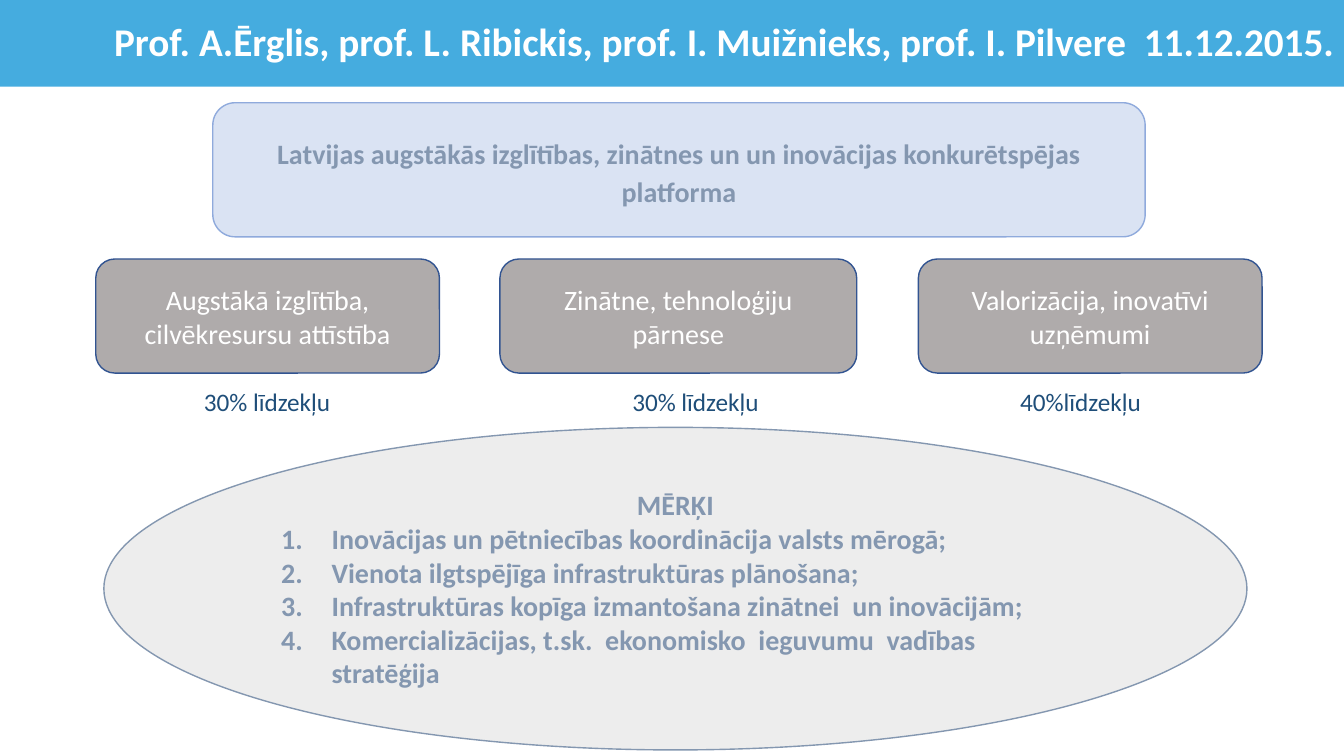
from lxml.etree import SubElement
from pptx import Presentation
from pptx.dml.color import RGBColor
from pptx.enum.shapes import MSO_SHAPE
from pptx.enum.text import MSO_ANCHOR, PP_ALIGN
from pptx.oxml.ns import qn
from pptx.util import Pt

COLORS = {
    "banner": "45ACDF",
    "platform": "DAE3F3",
    "platform_line": "8FAADC",
    "pillar": "AFABAB",
    "pillar_line": "325491",
    "goals": "EDEDED",
    "slate": "8497B0",
    "share": "1F4E79",
    "white": "FFFFFF",
}

PILLARS = [
    ("Augstākā izglītība, cilvēkresursu attīstība", 68.4, 245.5),
    ("Zinātne, tehnoloģiju pārnese", 357.1, 254.9),
    ("Valorizācija, inovatīvi uzņēmumi", 656, 245.5),
]

SHARES = [
    ("30% līdzekļu", 112.3, 157),
    ("30% līdzekļu", 427.7, 138.2),
    ("40%līdzekļu", 698.4, 146.9),
]

GOALS = [
    "Inovācijas un pētniecības koordinācija valsts mērogā;",
    "Vienota ilgtspējīga infrastruktūras plānošana;",
    "Infrastruktūras kopīga izmantošana zinātnei  un inovācijām;",
    "Komercializācijas, t.sk.  ekonomisko  ieguvumu  vadības stratēģija",
]


def color(name):
    return RGBColor.from_string(COLORS[name])


def format_paragraph(paragraph, text, size, font_color, bold=False,
                     alignment=PP_ALIGN.CENTER, spacing=1.0):
    paragraph.alignment = alignment
    paragraph.line_spacing = spacing
    run = paragraph.add_run()
    run.text = text
    font_format = {"name": "Calibri", "size": Pt(size), "bold": bold}
    for attribute, value in font_format.items():
        setattr(run.font, attribute, value)
    run.font.color.rgb = color(font_color)


def prepare_frame(shape):
    frame = shape.text_frame
    frame_format = {"word_wrap": True, "vertical_anchor": MSO_ANCHOR.MIDDLE}
    for attribute, value in frame_format.items():
        setattr(frame, attribute, value)
    return frame


def add_panel(slide, kind, bounds, fill, line=None):
    shape = slide.shapes.add_shape(kind, *map(Pt, bounds))
    shape.shadow.inherit = False
    shape.fill.solid()
    shape.fill.fore_color.rgb = color(fill)
    if line:
        shape.line.color.rgb = color(line)
        shape.line.width = Pt(1)
    else:
        shape.line.fill.background()
    return prepare_frame(shape)


def add_label(slide, bounds, text):
    frame = prepare_frame(slide.shapes.add_textbox(*map(Pt, bounds)))
    format_paragraph(frame.paragraphs[0], text, 18, "share")


def number_paragraph(paragraph):
    properties = paragraph._p.get_or_add_pPr()
    properties.set("marL", str(Pt(36)))
    properties.set("indent", str(Pt(-36)))
    SubElement(properties, qn("a:buFont"), typeface="+mj-lt")
    SubElement(properties, qn("a:buAutoNum"), type="arabicPeriod")


def add_goals(slide):
    frame = add_panel(slide, MSO_SHAPE.OVAL, (74.2, 305.3, 816.5, 230.4),
                      "goals", "slate")
    format_paragraph(frame.paragraphs[0], "MĒRĶI", 20, "slate", bold=True)
    for goal in GOALS:
        paragraph = frame.add_paragraph()
        format_paragraph(paragraph, goal, 20, "slate", bold=True,
                         alignment=PP_ALIGN.LEFT)
        number_paragraph(paragraph)


def main():
    presentation = Presentation()
    presentation.slide_width = Pt(960)
    presentation.slide_height = Pt(540)
    slide = presentation.slides.add_slide(presentation.slide_layouts[6])

    banner = add_panel(slide, MSO_SHAPE.RECTANGLE, (0, 0, 960, 61.9), "banner")
    format_paragraph(
        banner.paragraphs[0],
        "Prof. A.Ērglis, prof. L. Ribickis, prof. I. Muižnieks, prof. I. Pilvere  11.12.2015.",
        28, "white", bold=True, alignment=PP_ALIGN.RIGHT, spacing=0.9)

    platform = add_panel(slide, MSO_SHAPE.ROUNDED_RECTANGLE,
                         (152, 73.4, 666, 95.8), "platform", "platform_line")
    format_paragraph(
        platform.paragraphs[0],
        "Latvijas augstākās izglītības, zinātnes un un inovācijas konkurētspējas platforma",
        20, "slate", bold=True, spacing=1.14)

    for text, left, width in PILLARS:
        pillar = add_panel(slide, MSO_SHAPE.ROUNDED_RECTANGLE,
                           (left, 185, width, 81.5), "pillar", "pillar_line")
        format_paragraph(pillar.paragraphs[0], text, 20, "white")

    add_goals(slide)

    for text, left, width in SHARES:
        add_label(slide, (left, 272.2, width, 28.8), text)

    presentation.save("out.pptx")


if __name__ == "__main__":
    main()
